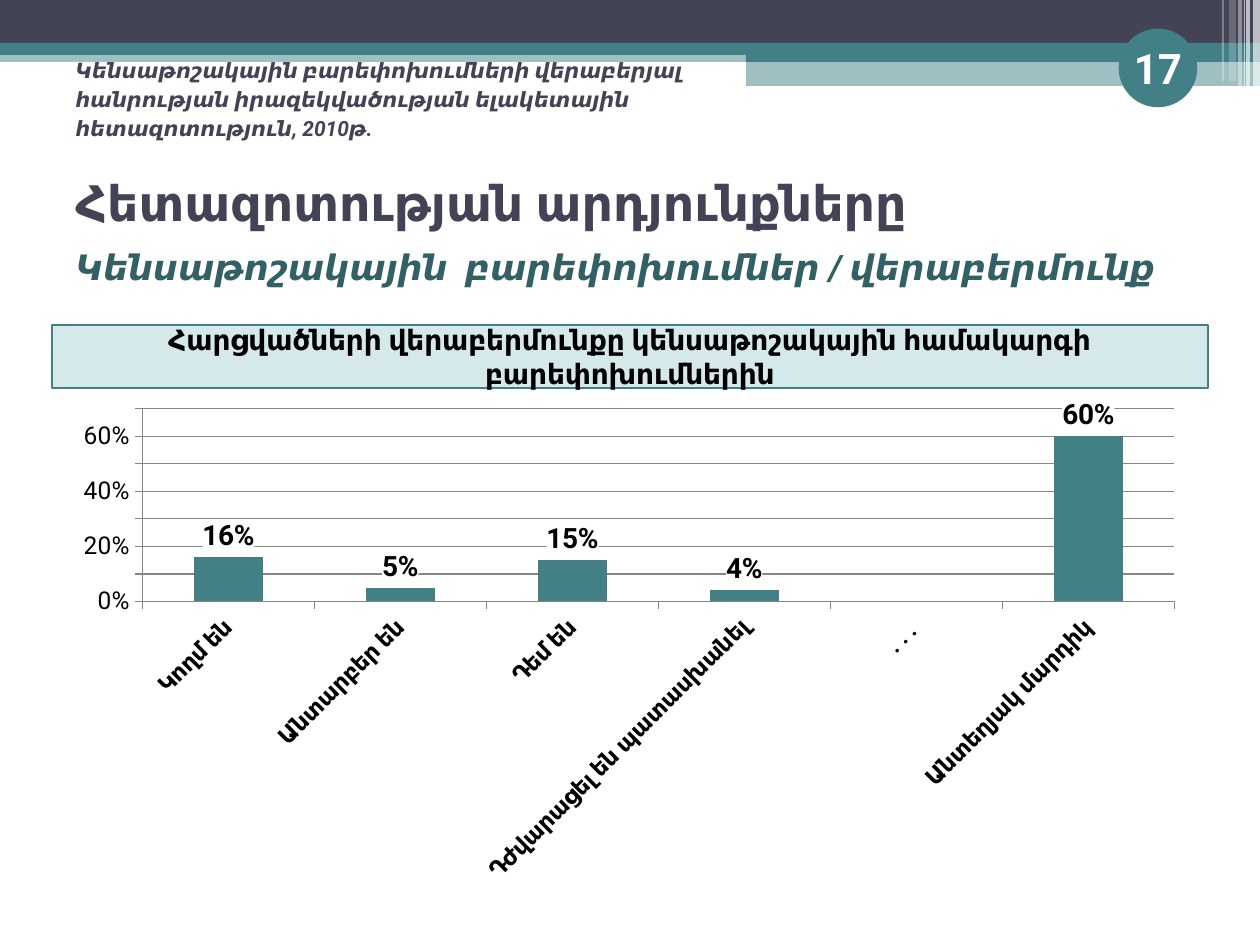
from dataclasses import dataclass

from lxml.etree import SubElement
from pptx import Presentation
from pptx.chart.data import CategoryChartData
from pptx.dml.color import RGBColor
from pptx.enum.chart import XL_CHART_TYPE as ChartType
from pptx.enum.chart import XL_LABEL_POSITION as LabelPosition
from pptx.enum.chart import XL_TICK_MARK as TickMark
from pptx.enum.shapes import MSO_SHAPE as Shape
from pptx.enum.text import MSO_ANCHOR as Anchor
from pptx.enum.text import PP_ALIGN as Align
from pptx.oxml import parse_xml
from pptx.oxml.ns import nsdecls, qn
from pptx.util import Emu, Pt

SCALE = 914400 / 126


@dataclass(frozen=True)
class Theme:
    """Colours, font and type sizes of the slide."""
    font: str = "Roboto"
    navy: str = "424456"
    teal: str = "438086"
    deep: str = "326065"
    pale: str = "D6E9EA"
    grid: str = "868686"
    white: str = "FFFFFF"
    black: str = "000000"
    heading: int = 28
    number: int = 24
    subheading: int = 20
    banner: int = 16
    axis: int = 14
    category: int = 13
    source: int = 12


THEME = Theme()


def px(*lengths):
    """Turn pixel lengths into EMU."""
    return [Emu(round(length * SCALE)) for length in lengths]


def apply(target, values):
    """Set each named attribute on the target."""
    for name, value in values.items():
        setattr(target, name, value)


def style_font(font, size, color, bold=True, italic=False):
    """Give a font its face, size, weight and colour."""
    apply(font, {"name": THEME.font, "size": Pt(size), "bold": bold, "italic": italic})
    font.color.rgb = RGBColor.from_string(color)


def add_box(slide, box, fill, opacity=100, line=None, kind=Shape.RECTANGLE):
    """Draw a flat shape, see-through or outlined on request."""
    shape = slide.shapes.add_shape(kind, *px(*box))
    shape.shadow.inherit = False
    shape.fill.solid()
    shape.fill.fore_color.rgb = RGBColor.from_string(fill)
    if opacity < 100:
        color = shape.fill._xPr.find(".//" + qn("a:srgbClr"))
        SubElement(color, qn("a:alpha"), val=str(opacity * 1000))
    if line:
        shape.line.color.rgb = RGBColor.from_string(THEME.teal)
        shape.line.width = Pt(line)
    else:
        shape.line.fill.background()
    return shape


def add_run(paragraph, text, size, color, shadow=False, **look):
    """Append a styled run, with a soft text shadow on request."""
    run = paragraph.add_run()
    run.text = text
    style_font(run.font, size, color, **look)
    if shadow:
        effect = parse_xml(
            f'<a:effectLst {nsdecls("a")}><a:outerShdw blurRad="38100" dist="38100" '
            'dir="2700000" algn="tl"><a:srgbClr val="000000"><a:alpha val="43000"/>'
            '</a:srgbClr></a:outerShdw></a:effectLst>')
        run._r.get_or_add_rPr().find(qn("a:solidFill")).addnext(effect)


def open_text(shape, align=Align.LEFT):
    """Prepare a shape for middle-anchored text and return its paragraph."""
    apply(shape.text_frame, {"word_wrap": True, "vertical_anchor": Anchor.MIDDLE})
    paragraph = shape.text_frame.paragraphs[0]
    paragraph.alignment = align
    return paragraph


def add_header(slide, box):
    """Draw the layered bands and the fading stripes at the right edge."""
    left, top, width, height = box
    split, right = left + 746, left + width
    add_box(slide, (left, top + 50, width, 12), THEME.teal, 50)
    add_box(slide, (left, top, width, 43), THEME.navy)
    add_box(slide, (left, top + 43, width, 12), THEME.teal)
    add_box(slide, (split, top + 49, right - split, 13), THEME.teal)
    add_box(slide, (split, top + 61, right - split, 25), THEME.teal, 50)
    stripes = [(7, 7, height, 65), (14, 4, height, 65), (16, 1, height, 60),
               (22, 4, height, 40), (31, 7, 81, 20), (38, 2, 81, 30)]
    for offset, stripe_width, stripe_height, opacity in stripes:
        add_box(slide, (right - offset, top, stripe_width, stripe_height), THEME.white, opacity)


def add_page_number(slide, box, number):
    """Draw the page number in a disc."""
    disc = add_box(slide, box, THEME.teal, line=1.5, kind=Shape.OVAL)
    margins = ("margin_left", "margin_top", "margin_right", "margin_bottom")
    apply(disc.text_frame, dict.fromkeys(margins, 0))
    add_run(open_text(disc, Align.CENTER), number, THEME.number, THEME.white)


def add_heading(slide, box, heading, subheading):
    """Write the heading with its subheading on the next line."""
    paragraph = open_text(slide.shapes.add_textbox(*px(*box)))
    add_run(paragraph, heading, THEME.heading, THEME.navy, shadow=True)
    paragraph.add_line_break()
    add_run(paragraph, subheading, THEME.subheading, THEME.deep, shadow=True, italic=True)
    add_run(paragraph, " ", THEME.heading, THEME.navy)


def add_source(slide, box, text):
    """Write the name of the study."""
    paragraph = open_text(slide.shapes.add_textbox(*px(*box)))
    paragraph.line_spacing = 1.14
    add_run(paragraph, text, THEME.source, THEME.navy, shadow=True, italic=True)


def add_banner(slide, box, text):
    """Draw the chart title in a pale outlined bar."""
    paragraph = open_text(add_box(slide, box, THEME.pale, line=0.75), Align.CENTER)
    paragraph.space_before = Pt(3)
    apply(paragraph._p.get_or_add_pPr(), {"marL": Pt(29), "indent": Pt(-20)})
    add_run(paragraph, text, THEME.banner, THEME.black)


def style_axes(chart):
    """Set the scale, ticks, lines and labels of both axes."""
    values, categories = chart.value_axis, chart.category_axis
    apply(values, {"minimum_scale": 0, "maximum_scale": 0.7, "major_unit": 0.1,
                   "has_major_gridlines": True})
    apply(values.tick_labels, {"number_format": "0%", "number_format_is_linked": False})
    for axis, size, bold in ((values, THEME.axis, False), (categories, THEME.category, True)):
        axis.major_tick_mark = TickMark.OUTSIDE
        style_font(axis.tick_labels.font, size, THEME.black, bold)
    for line in (values.format.line, categories.format.line, values.major_gridlines.format.line):
        line.color.rgb = RGBColor.from_string(THEME.grid)
        line.width = Pt(0.75)
    categories._element.find(qn("c:txPr")).find(qn("a:bodyPr")).set("rot", "-2700000")


def add_attitude_chart(slide, box, shares):
    """Draw the column chart of attitudes."""
    data = CategoryChartData(number_format="0%")
    data.categories = list(shares)
    data.add_series("Series 1", shares.values())
    chart = slide.shapes.add_chart(ChartType.COLUMN_CLUSTERED, *px(*box), data).chart
    apply(chart, {"has_legend": False, "has_title": False})
    style_font(chart.font, THEME.axis, THEME.black, bold=False)
    style_axes(chart)
    plot = chart.plots[0]
    apply(plot, {"gap_width": 150, "vary_by_categories": False, "has_data_labels": True})
    fill = plot.series[0].format.fill
    fill.solid()
    fill.fore_color.rgb = RGBColor.from_string(THEME.teal)
    labels = plot.data_labels
    apply(labels, {"show_value": True, "position": LabelPosition.OUTSIDE_END,
                   "number_format": "0%", "number_format_is_linked": False})
    style_font(labels.font, THEME.banner, THEME.black)
    labels._element.find(qn("c:txPr")).addprevious(parse_xml(
        f'<c:spPr {nsdecls("c", "a")}><a:solidFill><a:srgbClr val="{THEME.white}"/>'
        '</a:solidFill></c:spPr>'))
    area = chart._chartSpace.chart.plotArea
    for old in area.findall(qn("c:layout")):
        area.remove(old)
    layout = SubElement(area, qn("c:layout"))
    area.insert(0, layout)
    manual = SubElement(layout, qn("c:manualLayout"))
    frame = {"layoutTarget": "inner", "xMode": "edge", "yMode": "edge",
             "x": 0.07, "y": 0.02, "w": 0.91, "h": 0.39}
    for name, value in frame.items():
        SubElement(manual, qn("c:" + name), val=str(value))


def main():
    """Build the slide and save it."""
    presentation = Presentation()
    apply(presentation, dict(zip(("slide_width", "slide_height"), px(1260, 945))))
    slide = presentation.slides.add_slide(presentation.slide_layouts[6])
    add_header(slide, (0, 0, 1260, 86))
    add_page_number(slide, (1120, 30, 76, 76), "17")
    add_heading(slide, (63, 158, 1134, 147), "Հետազոտության արդյունքները",
                "Կենսաթոշակային  բարեփոխումներ / վերաբերմունք")
    add_attitude_chart(slide, (63, 399, 1134, 494), {
        "Կողմ են": 0.16, "Անտարբեր են": 0.05, "Դեմ են": 0.15,
        "Դժվարացել են պատասխանել": 0.04, ". . . ": None, "Անտեղյակ մարդիկ": 0.6})
    add_banner(slide, (52, 325, 1156, 63),
               "Հարցվածների վերաբերմունքը կենսաթոշակային համակարգի բարեփոխումներին")
    add_source(slide, (63, 58, 683, 79),
               "Կենսաթոշակային բարեփոխումների վերաբերյալ հանրության իրազեկվածության "
               "ելակետային հետազոտություն, 2010թ.")
    presentation.save("out.pptx")


if __name__ == "__main__":
    main()
